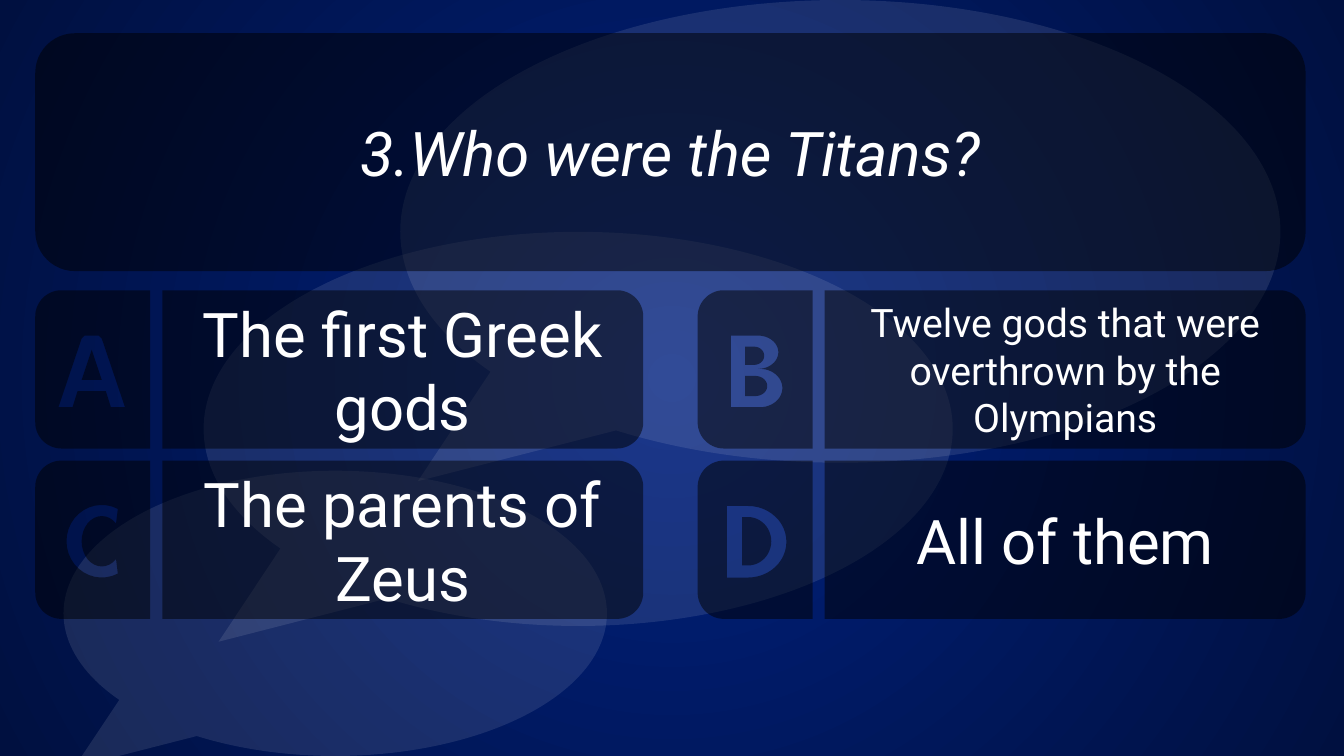
import math
from dataclasses import dataclass

from lxml import etree
from pptx import Presentation
from pptx import util as u
from pptx.dml import color
from pptx.enum import shapes, text
from pptx.oxml import ns

Point = tuple[float, float]
Contour = list[Point]

FONT = "Roboto"
WHITE = "FFFFFF"
BLACK = "000000"

MARGIN = 0.35
COLUMN_STEP = 6.57
FIRST_ROW = 2.88
ROW_STEP = 1.69
TILE_HEIGHT = 1.57
BADGE_WIDTH = 1.14
ANSWER_OFFSET = 1.26
ANSWER_WIDTH = 4.77
CORNER_RADIUS = 0.26
LETTER_TOP = 0.45
LETTER_BOTTOM = 1.16


@dataclass(frozen=True)
class Bubble:
    left: float
    top: float
    width: float
    height: float


@dataclass(frozen=True)
class Answer:
    letter: str
    wording: str
    size: int = 44


BUBBLES = [
    Bubble(0.63, 4.67, 5.39, 2.83),
    Bubble(2.02, 2.3, 7.43, 3.91),
    Bubble(3.97, 0, 8.73, 4.59),
]
ANSWERS = [
    Answer("A", "The first Greek gods"),
    Answer("B", "Twelve gods that were overthrown by the Olympians", size=28),
    Answer("C", "The parents of Zeus"),
    Answer("D", "All of them"),
]


def arc(x: float, y: float, radius_x: float, radius_y: float,
        start: float, end: float) -> Contour:
    """Sample an elliptical arc; angles run clockwise in degrees."""
    steps = 24
    angles = [math.radians(start + (end - start) * step / steps)
              for step in range(steps + 1)]
    return [(x + radius_x * math.cos(angle), y + radius_y * math.sin(angle))
            for angle in angles]


def bowl(left: float, right: float, top: float, bottom: float,
         reach: float) -> Contour:
    """Outline a box whose right side bulges out by reach."""
    half = (bottom - top) / 2
    curve = arc(right - reach, top + half, reach, half, -90, 90)
    return [(left, top), *curve, (left, bottom)]


def letter_a() -> list[Contour]:
    axis = 0.56
    right = [(0.07, LETTER_TOP), (0.1, 0.48), (0.33, LETTER_BOTTOM),
             (0.19, LETTER_BOTTOM), (0.14, 1)]
    outline = [(axis + x, y) for x, y in right]
    outline += [(axis - x, y) for x, y in reversed(right)]
    return [outline, [(axis, 0.59), (axis + 0.1, 0.89), (axis - 0.1, 0.89)]]


def letter_b() -> list[Contour]:
    waist = 0.78
    upper = bowl(0.33, 0.8, LETTER_TOP, waist, 0.2)
    lower = bowl(0.33, 0.84, waist, LETTER_BOTTOM, 0.22)
    return [upper[:-1] + lower[1:],
            bowl(0.47, 0.66, 0.56, 0.74, 0.1),
            bowl(0.47, 0.69, 0.85, 1.05, 0.12)]


def letter_c() -> list[Contour]:
    x, y = 0.66, 0.8
    return [arc(x, y, 0.35, 0.36, -63, -297) + arc(x, y, 0.2, 0.25, -315, -45)]


def letter_d() -> list[Contour]:
    return [bowl(0.29, 0.88, LETTER_TOP, LETTER_BOTTOM, 0.38),
            bowl(0.44, 0.73, 0.56, 1.04, 0.23)]


LETTERS = {"A": letter_a, "B": letter_b, "C": letter_c, "D": letter_d}


def rgb(value: str) -> color.RGBColor:
    return color.RGBColor.from_string(value)


def paint(shape, fill: str, opacity: int) -> None:
    """Give a shape a translucent fill, no line and no shadow."""
    shape.shadow.inherit = False
    shape.line.fill.background()
    shape.fill.solid()
    shape.fill.fore_color.rgb = rgb(fill)
    tint = shape.element.spPr.find(".//" + ns.qn("a:srgbClr"))
    etree.SubElement(tint, ns.qn("a:alpha"), val=str(opacity * 1000))


def write(shape, wording: str, *, size: int = 44, italic: bool = False) -> None:
    frame = shape.text_frame
    frame.word_wrap = True
    frame.vertical_anchor = text.MSO_ANCHOR.MIDDLE
    paragraph = frame.paragraphs[0]
    paragraph.alignment = text.PP_ALIGN.CENTER
    run = paragraph.add_run()
    run.text = wording
    run.font.name = FONT
    run.font.size = u.Pt(size)
    run.font.italic = italic
    run.font.color.rgb = rgb(WHITE)


def tile_contour(width: float, round_left: bool = False) -> Contour:
    """Outline a tile whose left or right corners are rounded."""
    x, radius = width - CORNER_RADIUS, CORNER_RADIUS
    contour = [(0, 0),
               *arc(x, radius, radius, radius, -90, 0),
               *arc(x, TILE_HEIGHT - radius, radius, radius, 0, 90),
               (0, TILE_HEIGHT)]
    return [(width - x, y) for x, y in contour] if round_left else contour


def draw_tile(slide, left: float, top: float, contours: list[Contour]):
    """Draw one dark tile; contours after the first are cut out of it."""
    placed = [[(u.Inches(left + x), u.Inches(top + y)) for x, y in contour]
              for contour in contours]
    builder = slide.shapes.build_freeform(*placed[0][0], scale=1.0)
    builder.add_line_segments(placed[0][1:], close=True)
    for contour in placed[1:]:
        builder.move_to(*contour[0])
        builder.add_line_segments(contour[1:], close=True)
    tile = builder.convert_to_shape()
    paint(tile, BLACK, 50)
    return tile


def draw_background(slide) -> None:
    """Fill the slide with a gradient that darkens from its centre."""
    fill = slide.background.fill
    fill.gradient()
    for stop, shade in zip(fill.gradient_stops, ("00217F", "001040")):
        stop.color.rgb = rgb(shade)
    linear = slide.element.find(".//" + ns.qn("a:lin"))
    gradient = linear.getparent()
    gradient.remove(linear)
    circle = etree.SubElement(gradient, ns.qn("a:path"), path="circle")
    etree.SubElement(circle, ns.qn("a:fillToRect"),
                     {side: "50000" for side in "ltrb"})


def draw_bubbles(slide) -> None:
    group = slide.shapes.add_group_shape()
    for bubble in BUBBLES:
        shape = group.shapes.add_shape(
            shapes.MSO_SHAPE.OVAL_CALLOUT, u.Inches(bubble.left),
            u.Inches(bubble.top), u.Inches(bubble.width), u.Inches(bubble.height))
        shape.adjustments[0], shape.adjustments[1] = -0.48, 0.54
        paint(shape, WHITE, 10)


def draw_answer(slide, answer: Answer, left: float, top: float) -> None:
    tile = draw_tile(slide, left + ANSWER_OFFSET, top, [tile_contour(ANSWER_WIDTH)])
    write(tile, answer.wording, size=answer.size)
    badge = tile_contour(BADGE_WIDTH, round_left=True)
    draw_tile(slide, left, top, [badge, *LETTERS[answer.letter]()])


def draw_question(slide) -> None:
    panel = slide.shapes.add_shape(
        shapes.MSO_SHAPE.ROUNDED_RECTANGLE, u.Inches(MARGIN), u.Inches(0.33),
        u.Inches(12.6), u.Inches(2.36))
    paint(panel, BLACK, 50)
    write(panel, "3.Who were the Titans?", italic=True)


presentation = Presentation()
presentation.slide_width = u.Inches(13.33)
presentation.slide_height = u.Inches(7.5)
game_slide = presentation.slides.add_slide(presentation.slide_layouts[6])
draw_background(game_slide)
draw_bubbles(game_slide)
for index, choice in enumerate(ANSWERS):
    row, column = divmod(index, 2)
    draw_answer(game_slide, choice, MARGIN + column * COLUMN_STEP,
                FIRST_ROW + row * ROW_STEP)
draw_question(game_slide)
presentation.save("out.pptx")
